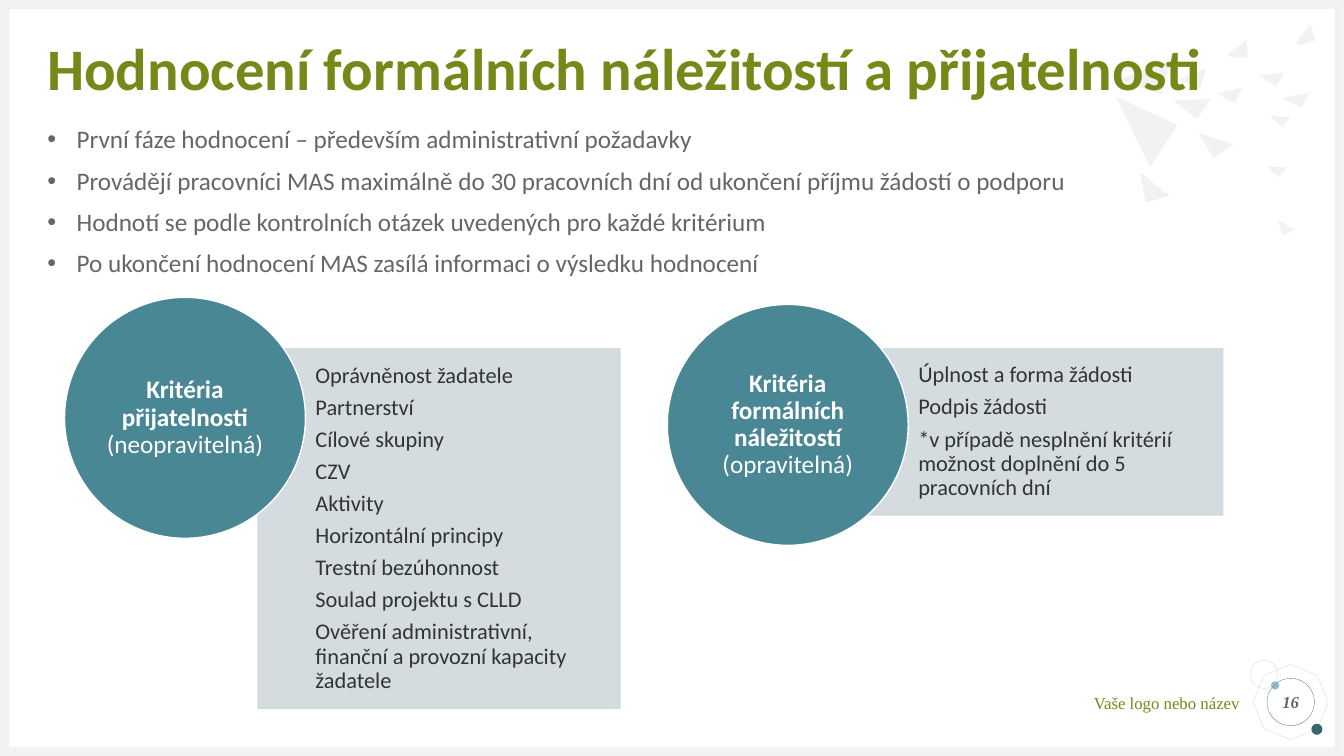
from dataclasses import dataclass

from lxml import etree
from pptx import Presentation
from pptx.dml.color import RGBColor
from pptx.enum.shapes import MSO_SHAPE
from pptx.enum.text import MSO_ANCHOR, PP_ALIGN
from pptx.oxml.ns import qn
from pptx.util import Inches, Pt

RECT, OVAL, OCTAGON = MSO_SHAPE.RECTANGLE, MSO_SHAPE.OVAL, MSO_SHAPE.OCTAGON
TOP, MIDDLE = MSO_ANCHOR.TOP, MSO_ANCHOR.MIDDLE
LEFT, CENTER, RIGHT = PP_ALIGN.LEFT, PP_ALIGN.CENTER, PP_ALIGN.RIGHT

# Grid of square cells covering the slide
COLS, ROWS = 1333, 750
CELL = Inches(0.01)
BORDER = 9

GREEN, TEAL, GREY, PALE = "758918", "4A8795", "666666", "F2F2F2"
PANEL, DARK, WHITE, RING = "D0D9DD", "333333", "FFFFFF", "D9D9D9"
SANS, SERIF = "Calibri", "Times New Roman"


@dataclass
class Box:
    x: float
    y: float
    w: float
    h: float


@dataclass
class Run:
    text: str
    bold: bool = False
    italic: bool = False


@dataclass
class Style:
    size: float
    color: str
    font: str = SANS
    align: PP_ALIGN = LEFT
    anchor: MSO_ANCHOR = MIDDLE
    line: float = 0.9
    before: float = 0
    after: float = 0
    bullet: bool = False
    insets: tuple[int, int, int, int] = (0, 0, 0, 0)


@dataclass
class Panel:
    x: int
    circle_y: int
    height: int
    heading: str
    note: str
    items: list[str]


TITLE = Style(42, GREEN)
BODY = Style(18, GREY, anchor=TOP, before=10, bullet=True)
FOOTER = Style(12, GREEN, SERIF, RIGHT, TOP, 1)
NUMBER = Style(12, GREY, SERIF, CENTER, line=1)
ITEM = Style(16, DARK, after=5.6, insets=(0, 12, 12, 12))
CIRCLE = Style(18, WHITE, align=CENTER)

BULLETS = [
    "První fáze hodnocení – především administrativní požadavky",
    "Provádějí pracovníci MAS maximálně do 30 pracovních dní od ukončení příjmu žádostí o podporu",
    "Hodnotí se podle kontrolních otázek uvedených pro každé kritérium",
    "Po ukončení hodnocení MAS zasílá informaci o výsledku hodnocení",
]
PANELS = [
    Panel(64, 295, 357, "Kritéria přijatelnosti ", "(neopravitelná)", [
        "Oprávněnost žadatele", "Partnerství", "Cílové skupiny", "CZV",
        "Aktivity", "Horizontální principy", "Trestní bezúhonnost",
        "Soulad projektu s CLLD",
        "Ověření administrativní, finanční a provozní kapacity žadatele"]),
    Panel(662, 302, 165, "Kritéria formálních náležitostí ", "(opravitelná)", [
        "Úplnost a forma žádosti", "Podpis žádosti",
        "*v případě nesplnění kritérií možnost doplnění do 5 pracovních dní"]),
]
SHARDS = [
    [(1161, 60), (1152, 94), (1111, 79)],
    [(1201, 98), (1188, 118), (1164, 100)],
    [(1196, 68), (1191, 87), (1169, 79)],
    [(1232, 87), (1225, 102), (1207, 93)],
    [(1237, 40), (1238, 57), (1224, 57), (1218, 55)],
    [(1280, 116), (1272, 126), (1264, 119), (1261, 115)],
    [(1300, 24), (1305, 40), (1292, 44), (1285, 44)],
    [(1274, 72), (1266, 86), (1249, 75)],
    [(1298, 92), (1291, 107), (1278, 101), (1273, 97)],
    [(1168, 124), (1141, 166), (1107, 96)],
    [(1224, 143), (1204, 157), (1189, 132)],
    [(1276, 166), (1269, 176), (1260, 169), (1258, 165)],
    [(1160, 194), (1137, 201), (1131, 171)],
    [(1285, 228), (1273, 233), (1269, 223), (1269, 219)],
]

prs = Presentation()
prs.slide_width, prs.slide_height = Inches(40 / 3), ROWS * CELL
s = prs.slides.add_slide(prs.slide_layouts[6])


def rgb(color: str) -> RGBColor:
    return RGBColor.from_string(color)


def place(box: Box) -> list[int]:
    return [round(v * CELL) for v in (box.x, box.y, box.w, box.h)]


def paint(sp, fill: str = "", line: str = "", width: float = 1, alpha: int = 100):
    sp.shadow.inherit = False
    if fill:
        sp.fill.solid()
        sp.fill.fore_color.rgb = rgb(fill)
    else:
        sp.fill.background()
    if line:
        sp.line.color.rgb = rgb(line)
        sp.line.width = Pt(width)
    else:
        sp.line.fill.background()
    if alpha < 100:
        for color in sp._element.spPr.iter(qn("a:srgbClr")):
            etree.SubElement(color, qn("a:alpha"), val=str(alpha * 1000))
    return sp


def add_shape(kind: MSO_SHAPE, box: Box, fill: str = "", line: str = "",
              width: float = 1, alpha: int = 100):
    return paint(s.shapes.add_shape(kind, *place(box)), fill, line, width, alpha)


def write(sp, paragraphs: list[list[Run]], style: Style) -> None:
    tf = sp.text_frame
    tf.word_wrap = True
    tf.vertical_anchor = style.anchor
    tf.margin_left, tf.margin_top, tf.margin_right, tf.margin_bottom = (
        v * CELL for v in style.insets)
    for i, runs in enumerate(paragraphs):
        p = tf.add_paragraph() if i else tf.paragraphs[0]
        p.alignment = style.align
        p.line_spacing = style.line
        p.space_before = Pt(style.before if i else 0)
        p.space_after = Pt(style.after)
        if style.bullet:
            pPr = p._p.get_or_add_pPr()
            pPr.set("marL", str(29 * CELL))
            pPr.set("indent", str(-29 * CELL))
            etree.SubElement(pPr, qn("a:buFont"), typeface="Arial")
            etree.SubElement(pPr, qn("a:buChar"), char="•")
        for run in runs:
            r = p.add_run()
            r.text = run.text
            r.font.name, r.font.size = style.font, Pt(style.size)
            r.font.bold, r.font.italic = run.bold, run.italic
            r.font.color.rgb = rgb(style.color)


def add_text(box: Box, paragraphs: list[list[Run]], style: Style) -> None:
    write(s.shapes.add_textbox(*place(box)), paragraphs, style)


def add_panel(panel: Panel) -> None:
    x, y = panel.x, panel.circle_y
    add_shape(RECT, Box(x + 192, 346, 359, panel.height), PANEL, PANEL, alpha=90)
    add_text(Box(x + 249, 346, 301, panel.height), [[Run(t)] for t in panel.items], ITEM)
    add_shape(OVAL, Box(x, y, 239, 239), TEAL, WHITE)
    add_text(Box(x + 35, y + 35, 169, 169),
             [[Run(panel.heading, bold=True), Run(panel.note)]], CIRCLE)


# Page-number ornament and footer
add_shape(OCTAGON, Box(1246, 662, 69, 69), line=RING, width=0.25).rotation = 22.7
add_shape(OVAL, Box(1261, 676, 8, 8), "8CBBC6")
add_shape(OVAL, Box(1301, 718, 11, 11), "376570")
add_text(Box(955, 687, 275, 20), [[Run("Vaše logo nebo název")]], FOOTER)
add_shape(OVAL, Box(1240, 655, 28, 28), line=RING, width=0.25)

# Slide border
for edge in (Box(0, ROWS - BORDER, COLS, BORDER), Box(0, 0, COLS, BORDER),
             Box(0, 0, BORDER, ROWS), Box(COLS - BORDER, 0, BORDER, ROWS)):
    add_shape(RECT, edge, PALE)

# Scattered shards
for start, *rest in SHARDS:
    outline = s.shapes.build_freeform(*start, scale=CELL)
    outline.add_line_segments(rest, close=True)
    paint(outline.convert_to_shape(), PALE)

# Title, bullets and page number
add_text(Box(47, 126, 1240, 512), [[Run(t)] for t in BULLETS], BODY)
add_text(Box(47, 47, 1240, 47),
         [[Run("Hodnocení formálních náležitostí a přijatelnosti", bold=True)]], TITLE)
write(add_shape(OVAL, Box(1257, 673, 47, 47), line=TEAL, width=0.25),
      [[Run("16", bold=True, italic=True)]], NUMBER)

# Criteria panels
for panel in PANELS:
    add_panel(panel)

prs.save("out.pptx")
